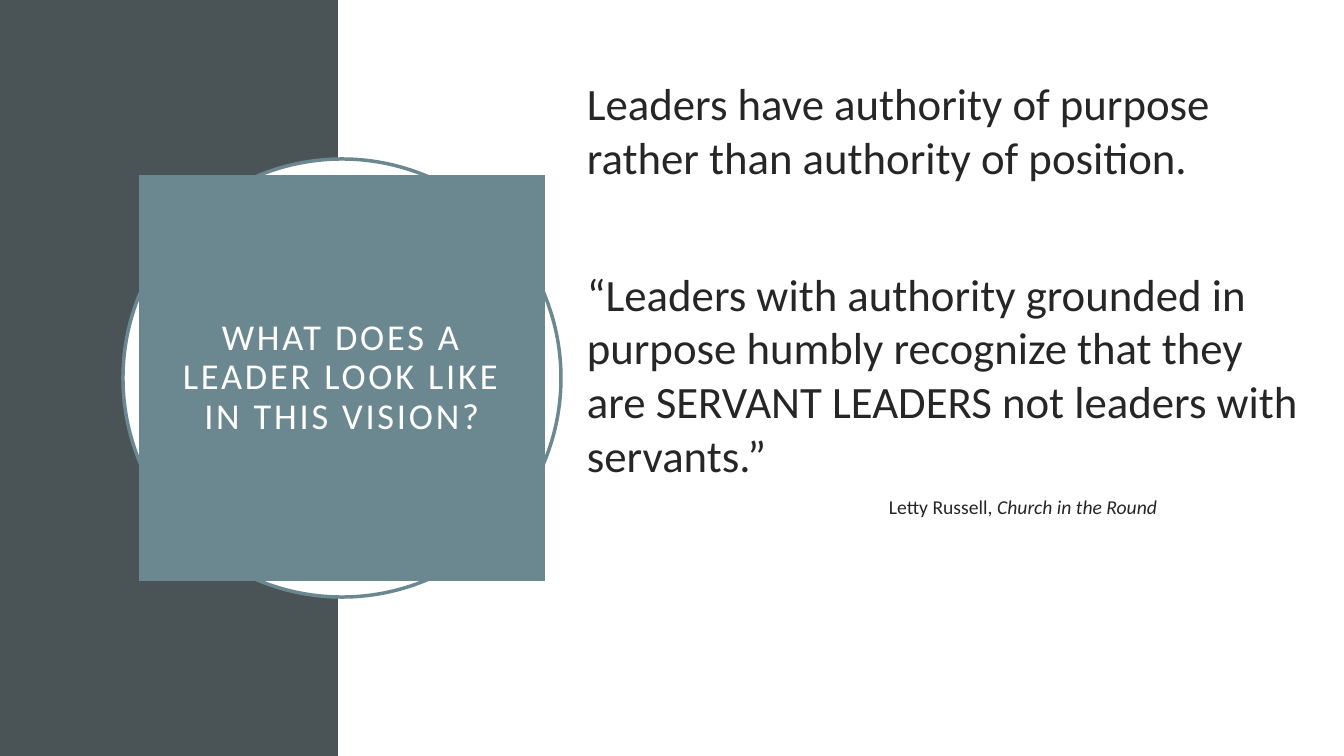
from dataclasses import dataclass

from pptx import Presentation
from pptx.dml.color import RGBColor
from pptx.enum.shapes import MSO_SHAPE
from pptx.enum.text import MSO_ANCHOR, MSO_AUTO_SIZE, PP_ALIGN
from pptx.util import Emu, Pt

RECT, OVAL = MSO_SHAPE.RECTANGLE, MSO_SHAPE.OVAL
MIDDLE, CENTER = MSO_ANCHOR.MIDDLE, PP_ALIGN.CENTER
NO_FIT = MSO_AUTO_SIZE.NONE
TITLE_ONLY = 5
EMU_PER_PX = 914400 / 100.8


def px(n):
    return Emu(round(n * EMU_PER_PX))


@dataclass(frozen=True)
class Theme:
    font: str = "Calibri"
    panel: RGBColor = RGBColor(0x4A, 0x53, 0x56)
    accent: RGBColor = RGBColor(0x6B, 0x88, 0x91)
    white: RGBColor = RGBColor(0xFF, 0xFF, 0xFF)
    ink: RGBColor = RGBColor(0x26, 0x26, 0x26)
    title_size: Pt = Pt(26)
    body_size: Pt = Pt(32)
    credit_size: Pt = Pt(14)
    ring_width: Pt = Pt(2.5)


class Deck:
    def __init__(self, theme):
        self.theme = theme
        self.prs = Presentation()
        self.prs.slide_width, self.prs.slide_height = px(1344), px(756)
        self.s = self.prs.slides.add_slide(self.prs.slide_layouts[TITLE_ONLY])

    def set_font(self, p, size, color):
        p.font.name = self.theme.font
        p.font.size = size
        p.font.color.rgb = color

    def shape(self, kind, box, fill, line=None):
        sp = self.s.shapes.add_shape(kind, *map(px, box))
        sp.shadow.inherit = False
        sp.fill.solid()
        sp.fill.fore_color.rgb = fill
        if line is None:
            sp.line.fill.background()
        else:
            sp.line.color.rgb = line
            sp.line.width = self.theme.ring_width

    def title(self, box, text, inset, tracking):
        """Place the title on a filled block, in front of earlier shapes."""
        sp = self.s.shapes.title
        sp.left, sp.top, sp.width, sp.height = map(px, box)
        sp.fill.solid()
        sp.fill.fore_color.rgb = self.theme.accent
        tf = sp.text_frame
        tf.text = text
        tf.word_wrap = True
        tf.auto_size = NO_FIT
        tf.vertical_anchor = MIDDLE
        tf.margin_left = tf.margin_right = px(inset)
        tf.margin_top = tf.margin_bottom = px(inset)
        p = tf.paragraphs[0]
        p.alignment = CENTER
        p.line_spacing = 0.9
        self.set_font(p, self.theme.title_size, self.theme.white)
        p.runs[0].font._element.set("spc", str(tracking * 100))
        self.s.shapes._spTree.append(sp._element)

    def text_box(self, box):
        tf = self.s.shapes.add_textbox(*map(px, box)).text_frame
        tf.word_wrap = True
        tf.vertical_anchor = MIDDLE
        return tf

    def paragraph(self, tf, text, size, before, indent=0, italic_end=""):
        p = tf.paragraphs[0] if not tf.text else tf.add_paragraph()
        p.space_before = Pt(before)
        self.set_font(p, size, self.theme.ink)
        p._p.get_or_add_pPr().set("marL", str(px(indent)))
        p.add_run().text = text
        if italic_end:
            r = p.add_run()
            r.text = italic_end
            r.font.italic = True


def main():
    theme = Theme()
    deck = Deck(theme)
    deck.shape(RECT, (0, 0, 338, 756), theme.panel)
    deck.shape(OVAL, (123, 159, 438, 438), theme.white, theme.accent)
    deck.title((139, 175, 406, 406),
               "WHAT DOES A LEADER LOOK LIKE IN THIS VISION?",
               inset=20, tracking=2)

    tf = deck.text_box((577, 39, 743, 517))
    deck.paragraph(
        tf, "Leaders have authority of purpose rather than authority of position.",
        theme.body_size, before=10)
    deck.paragraph(
        tf, "“Leaders with authority grounded in purpose humbly recognize that "
        "they are SERVANT LEADERS not leaders with servants.”",
        theme.body_size, before=59)
    deck.paragraph(tf, "Letty Russell, ", theme.credit_size, before=10,
                   indent=302, italic_end="Church in the Round")
    deck.prs.save("out.pptx")


if __name__ == "__main__":
    main()
